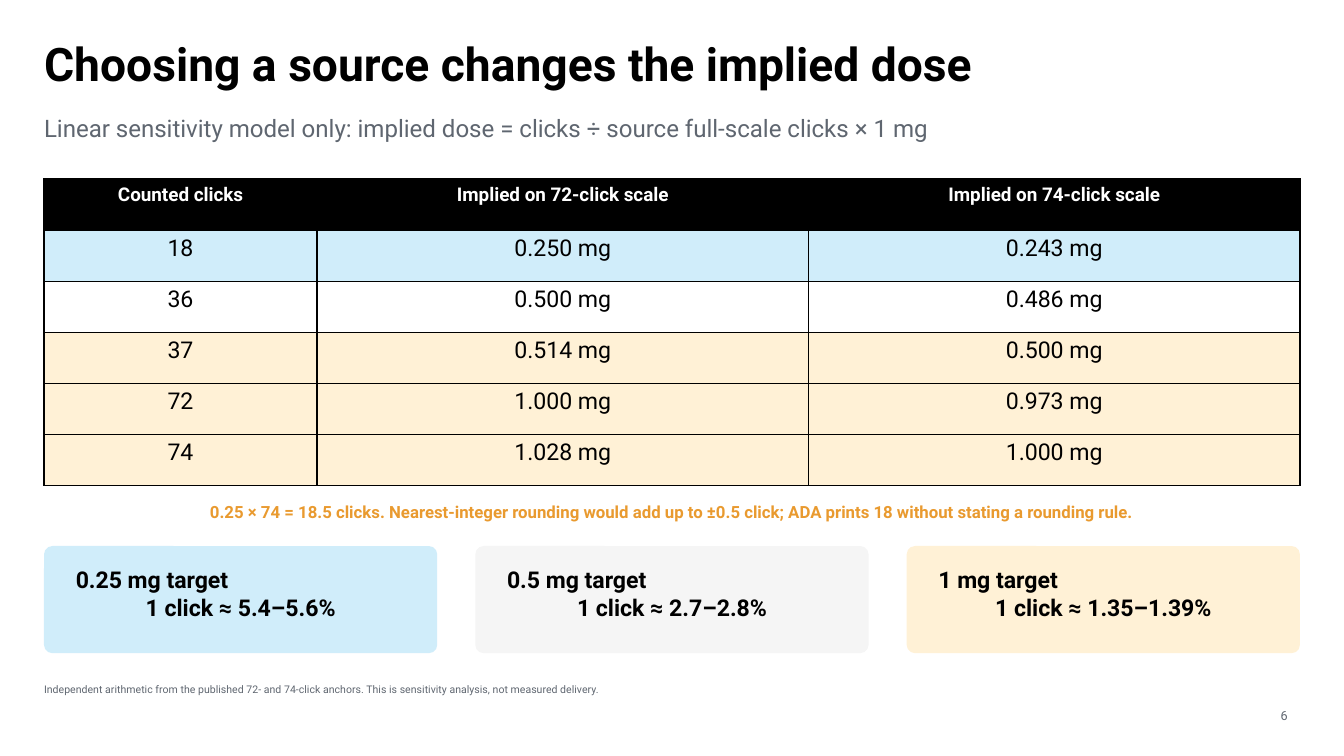
from lxml import etree
from pptx import Presentation
from pptx.dml.color import RGBColor
from pptx.enum import shapes, text
from pptx.oxml import ns
from pptx.util import Cm, Pt

BLACK = RGBColor(0x00, 0x00, 0x00)
WHITE = RGBColor(0xFF, 0xFF, 0xFF)
GREY = RGBColor(0x5F, 0x66, 0x70)
ORANGE = RGBColor(0xE9, 0x9A, 0x2F)
BLUE = RGBColor(0xD0, 0xED, 0xFA)
PALE = RGBColor(0xF5, 0xF5, 0xF5)
CREAM = RGBColor(0xFF, 0xF1, 0xD6)

LEFT, CENTER, RIGHT = text.PP_ALIGN.LEFT, text.PP_ALIGN.CENTER, text.PP_ALIGN.RIGHT
EDGE, WIDE = 1.11, 31.65

ROWS = [
    (BLACK, "Counted clicks", "Implied on 72-click scale", "Implied on 74-click scale"),
    (BLUE, "18", "0.250 mg", "0.243 mg"),
    (WHITE, "36", "0.500 mg", "0.486 mg"),
    (CREAM, "37", "0.514 mg", "0.500 mg"),
    (CREAM, "72", "1.000 mg", "0.973 mg"),
    (CREAM, "74", "1.028 mg", "1.000 mg"),
]
CARDS = [
    (BLUE, "0.25 mg target", "1 click ≈ 5.4–5.6%"),
    (PALE, "0.5 mg target", "1 click ≈ 2.7–2.8%"),
    (CREAM, "1 mg target", "1 click ≈ 1.35–1.39%"),
]


def style(para, words, size, color, bold=False, align=LEFT):
    para.alignment = align
    run = para.add_run()
    run.text = words
    for key, val in {"name": "Roboto", "size": Pt(size), "bold": bold}.items():
        setattr(run.font, key, val)
    run.font.color.rgb = color


def frame(slide, box, anchor=text.MSO_ANCHOR.TOP):
    """Add a text box without insets and return its text frame."""
    body = slide.shapes.add_textbox(*map(Cm, box)).text_frame
    look = {"margin_left": 0, "margin_right": 0, "margin_top": 0,
            "margin_bottom": 0, "word_wrap": True, "vertical_anchor": anchor}
    for key, val in look.items():
        setattr(body, key, val)
    return body


def label(slide, box, *look, **more):
    style(frame(slide, box).paragraphs[0], *look, **more)


def header(slide, x, y, w):
    label(slide, (x, y, w, 2.44), "Choosing a source changes the implied dose",
          33, BLACK, bold=True)
    label(slide, (x, y + 1.96, w, 1.17),
          "Linear sensitivity model only: implied dose = clicks ÷ source full-scale clicks × 1 mg",
          17.2, GREY)


def border(cell):
    props = cell._tc.get_or_add_tcPr()
    for spot, side in enumerate(("lnL", "lnR", "lnT", "lnB")):
        line = etree.Element(ns.qn("a:" + side), w=str(Pt(1)))
        fill = etree.SubElement(line, ns.qn("a:solidFill"))
        etree.SubElement(fill, ns.qn("a:srgbClr"), val=str(BLACK))
        props.insert(spot, line)


def doses(slide, x, y, w, h):
    first = 6.88
    grid = slide.shapes.add_table(len(ROWS), 3, *map(Cm, (x, y, w, h))).table
    grid.horz_banding = False
    for col, size in zip(grid.columns, (first, (w - first) / 2, (w - first) / 2)):
        col.width = Cm(size)
    for r, (fill, *words) in enumerate(ROWS):
        grid.rows[r].height = Cm(h / len(ROWS))
        look = (13.5, WHITE, True) if r == 0 else (16.5, BLACK, False)
        for c, word in enumerate(words):
            cell = grid.cell(r, c)
            cell.fill.solid()
            cell.fill.fore_color.rgb = fill
            border(cell)
            style(cell.text_frame.paragraphs[0], word, *look, align=CENTER)


def card(slide, x, y, w, h, fill, target, share):
    panel = slide.shapes.add_shape(shapes.MSO_SHAPE.ROUNDED_RECTANGLE,
                                   *map(Cm, (x, y, w, h)))
    panel.adjustments[0] = 0.078
    panel.shadow.inherit = False
    panel.fill.solid()
    panel.fill.fore_color.rgb = fill
    panel.line.fill.background()
    body = frame(slide, (x + 0.8, y + 0.5, w - 1.6, h - 1))
    style(body.paragraphs[0], target, 16.5, BLACK, bold=True)
    style(body.add_paragraph(), share, 16.5, BLACK, bold=True, align=CENTER)


def cards(slide, x, y, w, h):
    size = 9.91
    step = (w - size) / (len(CARDS) - 1)
    for i, item in enumerate(CARDS):
        card(slide, x + i * step, y, size, h, *item)


def footer(slide, x, y, w):
    label(slide, (x, y, 29.64, 0.84),
          "Independent arithmetic from the published 72- and 74-click anchors. "
          "This is sensitivity analysis, not measured delivery.", 7.5, GREY)
    page = frame(slide, (x + w - 1.42, y + 0.53, 1.11, 0.48), text.MSO_ANCHOR.BOTTOM)
    style(page.paragraphs[0], "6", 9, GREY, align=RIGHT)


def main():
    deck = Presentation()
    deck.slide_width, deck.slide_height = Cm(33.87), Cm(19.05)
    slide = deck.slides.add_slide(deck.slide_layouts[6])
    header(slide, EDGE, 0.89, WIDE)
    doses(slide, EDGE, 4.51, WIDE, 7.73)
    label(slide, (EDGE, 12.65, WIDE, 0.74),
          "0.25 × 74 = 18.5 clicks. Nearest-integer rounding would add up to ±0.5 click; "
          "ADA prints 18 without stating a rounding rule.",
          12, ORANGE, bold=True, align=CENTER)
    cards(slide, EDGE, 13.76, WIDE, 2.7)
    footer(slide, EDGE, 17.2, WIDE)
    deck.save("out.pptx")


if __name__ == "__main__":
    main()
